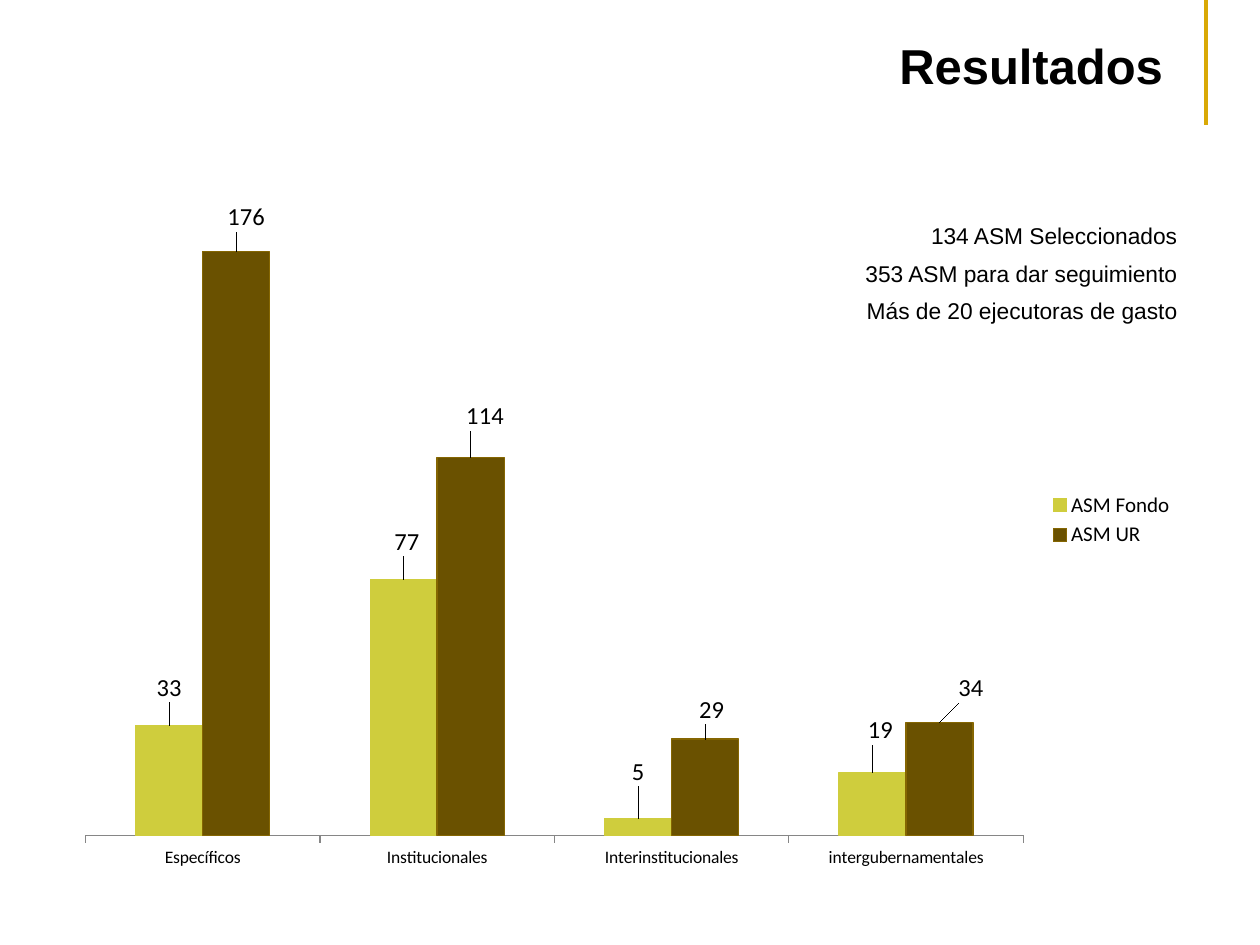
from lxml import etree
from pptx import Presentation, util as u
from pptx.chart.data import CategoryChartData
from pptx.dml.color import RGBColor
from pptx.enum import chart as ch, shapes, text
from pptx.oxml import parse_xml
from pptx.oxml.ns import nsdecls, qn

WIDE, HIGH = 10, 7.5
CATS = ["Específicos", "Institucionales", "Interinstitucionales", "intergubernamentales"]
BARS = [
    dict(name="ASM Fondo", vals=[33, 77, 5, 19], fill="CFCD3D", edge="CFCD3D",
         shift=[(0, -2.5), (0.3, -2.5), (0, -3.7), (0.7, -3)]),
    dict(name="ASM UR", vals=[176, 114, 29, 34], fill="6A5100", edge="856602",
         shift=[(0.9, -2), (1.3, -2.9), (0.6, -1.3), (2.8, -2)]),
]
FACTS = ["134 ASM Seleccionados", "353 ASM para dar seguimiento", "Más de 20 ejecutoras de gasto"]


def hue(code):
    return RGBColor.from_string(code)


def share(x, y, w, h):
    pairs = zip((x, y, w, h), (WIDE, HIGH) * 2)
    return [u.Inches(part * size / 100) for part, size in pairs]


def put(item, **form):
    for key, value in form.items():
        setattr(item, key, value)


def style(font, size, name, bold=False):
    put(font, size=u.Pt(size), name=name, bold=bold)
    font.color.rgb = hue("000000")


def layout(x, y, w=None, h=None):
    inner = '<c:layoutTarget val="inner"/><c:xMode val="edge"/><c:yMode val="edge"/>' if w else ""
    pairs = zip("xywh", (x, y, w, h))
    sides = "".join(f'<c:{key} val="{val / 100}"/>' for key, val in pairs if val is not None)
    return parse_xml(f'<c:layout {nsdecls("c")}><c:manualLayout>{inner}{sides}'
                     '</c:manualLayout></c:layout>')


def unlead(labels):
    labels.append(parse_xml(
        f'<c:extLst {nsdecls("c")}><c:ext uri="{{CE6537A1-D6FC-4f65-9D91-7224C49458BB}}" '
        'xmlns:c15="http://schemas.microsoft.com/office/drawing/2012/chart">'
        '<c15:showLeaderLines val="0"/></c:ext></c:extLst>'))


def write(box, lines, place, size, bold=False, **form):
    put(box, **dict(zip(("left", "top", "width", "height"), share(*place))))
    frame = box.text_frame
    frame.text = "\n".join(lines)
    put(frame, word_wrap=True, auto_size=text.MSO_AUTO_SIZE.NONE, **form)
    for i, para in enumerate(frame.paragraphs):
        props = para._p.get_or_add_pPr()
        put(para, alignment=text.PP_ALIGN.RIGHT, space_before=u.Pt(2.6 if i else 0))
        if len(lines) > 1:
            para.line_spacing = 1.2
            props.set("marL", "0")
            props.set("indent", "0")
            etree.SubElement(props, qn("a:buNone"))
        style(para.font, size, "Arial", bold)


def rule(slide, x, top, end):
    left, start, _, stop = share(x, top, 0, end)
    line = slide.shapes.add_connector(shapes.MSO_CONNECTOR.STRAIGHT, left, start, left, stop)
    line.line.color.rgb = hue("D9A906")
    line.line.width = u.Pt(2)
    etree.SubElement(line._element.spPr, qn("a:effectLst"))


def paint(series, bar):
    series.format.fill.solid()
    series.format.fill.fore_color.rgb = hue(bar["fill"])
    series.format.line.color.rgb = hue(bar["edge"])
    series.format.line.width = u.Pt(0.75)
    put(series.data_labels, show_value=True, position=ch.XL_LABEL_POSITION.OUTSIDE_END)
    style(series.data_labels.font, 14, "Calibri")
    for i in range(len(CATS)):
        label = series.points[i].data_label
        style(label.font, 14, "Calibri")
        label.position = ch.XL_LABEL_POSITION.OUTSIDE_END
    for mark, shift in zip(series._element.xpath(".//c:dLbl"), bar["shift"]):
        mark.insert(1, layout(*shift))
    unlead(series._element.find(qn("c:dLbls")))


def graph(slide, place):
    data = CategoryChartData()
    data.categories = CATS
    for bar in BARS:
        data.add_series(bar["name"], bar["vals"])
    kind = ch.XL_CHART_TYPE.COLUMN_CLUSTERED
    chart = slide.shapes.add_chart(kind, *share(*place), data).chart
    put(chart, has_title=False, has_legend=True)
    style(chart.font, 10, "Calibri")
    put(chart.legend, position=ch.XL_LEGEND_POSITION.RIGHT, include_in_layout=False)
    style(chart.legend.font, 12, "Calibri")
    put(chart.value_axis, visible=False, has_major_gridlines=False,
        minimum_scale=0, maximum_scale=200)
    axis = chart.category_axis
    put(axis, major_tick_mark=ch.XL_TICK_MARK.OUTSIDE, has_major_gridlines=False)
    axis.format.line.color.rgb = hue("868686")
    put(chart.plots[0], gap_width=150, overlap=0, vary_by_categories=False)
    for series, bar in zip(chart.plots[0].series, BARS):
        paint(series, bar)
    area = chart._chartSpace.chart.plotArea
    for old in area.findall(qn("c:layout")):
        area.remove(old)
    area.insert(0, layout(2, 2, 83.45, 91.55))


def main():
    deck = Presentation()
    put(deck, slide_width=u.Inches(WIDE), slide_height=u.Inches(HIGH))
    slide = deck.slides.add_slide(deck.slide_layouts[1])
    title, body = slide.placeholders
    write(title, ["Resultados"], (31.9, 2.8, 61.4, 8.13), 28, True,
          vertical_anchor=text.MSO_ANCHOR.MIDDLE)
    rule(slide, 95.7, 0, 13.2)
    write(body, FACTS, (55, 22.27, 39.4, 18.53), 13)
    graph(slide, (5, 16.67, 89.2, 76.67))
    deck.save("out.pptx")


if __name__ == "__main__":
    main()
